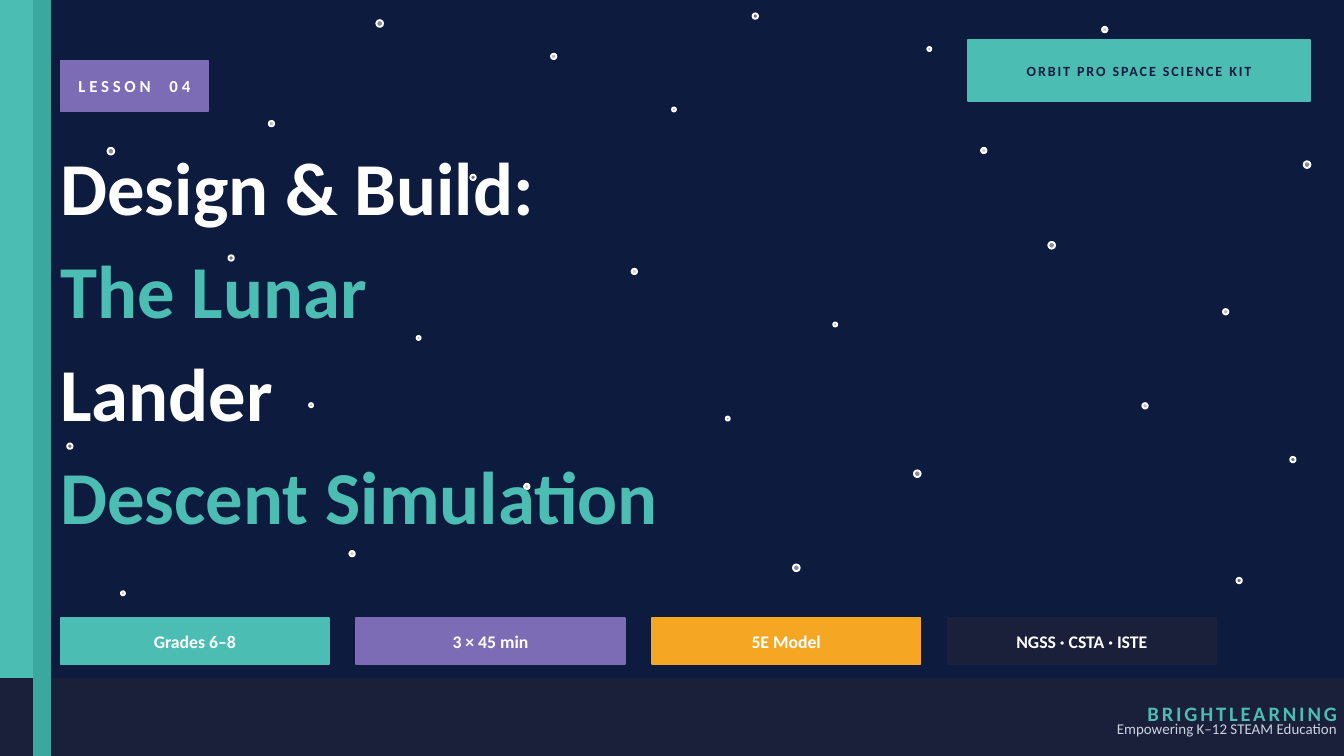
from pptx import Presentation
from pptx import util as u
from pptx.dml.color import RGBColor
from pptx.enum import shapes, text
from pptx.oxml import ns, xmlchemy

PX = u.Inches(1) // 200
NAVY = RGBColor(0x0D, 0x1B, 0x3E)
INK = RGBColor(0x1A, 0x1F, 0x3A)
TEAL = RGBColor(0x4B, 0xBD, 0xB3)
DARK_TEAL = RGBColor(0x3A, 0xA8, 0x9E)
PURPLE = RGBColor(0x7B, 0x6C, 0xB5)
ORANGE = RGBColor(0xF5, 0xA6, 0x23)
WHITE = RGBColor(0xFF, 0xFF, 0xFF)
PALE = RGBColor(0xCB, 0xD5, 0xE1)

presentation = Presentation()
presentation.slide_width = 2000 * PX
presentation.slide_height = 1125 * PX
slide = presentation.slides.add_slide(presentation.slide_layouts[5])
slide.background.fill.solid()
slide.background.fill.fore_color.rgb = NAVY


def add_shape(kind, box, color):
    shape = slide.shapes.add_shape(kind, *(value * PX for value in box))
    shape.shadow.inherit = False
    shape.fill.solid()
    shape.fill.fore_color.rgb = color
    shape.line.color.rgb = color
    shape.line.width = u.Pt(1)
    return shape


def write(shape, lines, size, colors, bold=True, spacing=0,
          align=text.PP_ALIGN.CENTER, anchor=text.MSO_ANCHOR.MIDDLE):
    frame = shape.text_frame
    frame.text = "\n".join(lines)
    frame.word_wrap = True
    frame.auto_size = text.MSO_AUTO_SIZE.NONE
    frame.vertical_anchor = anchor
    frame.margin_left = frame.margin_right = frame.margin_top = frame.margin_bottom = 0
    for paragraph, color in zip(frame.paragraphs, colors):
        paragraph.alignment = align
        paragraph.font.name = "Calibri"
        paragraph.font.size = u.Pt(size)
        paragraph.font.bold = bold
        paragraph.font.color.rgb = color
        if spacing:
            paragraph.runs[0]._r.get_or_add_rPr().set("spc", str(spacing))


stars = [
    (560, 30, 10, 50), (820, 80, 8, 70), (1120, 20, 8, 40), (1380, 70, 6, 65),
    (1640, 40, 8, 80), (160, 220, 10, 50), (400, 180, 8, 70), (700, 260, 8, 40),
    (1000, 160, 6, 65), (1460, 220, 8, 80), (1940, 240, 10, 50), (340, 380, 8, 40),
    (620, 500, 6, 65), (940, 400, 8, 80), (1240, 480, 6, 60), (1560, 360, 10, 50),
    (1820, 460, 8, 70), (100, 660, 8, 40), (460, 600, 6, 65), (780, 720, 8, 80),
    (1080, 620, 6, 60), (1360, 700, 10, 50), (1700, 600, 8, 70), (1920, 680, 8, 40),
    (180, 880, 6, 65), (520, 820, 8, 80), (1180, 840, 10, 50), (1480, 920, 8, 70),
    (1840, 860, 8, 40),
]
for left, top, diameter, opacity in stars:
    star = add_shape(shapes.MSO_SHAPE.OVAL, (left, top, diameter, diameter), WHITE)
    star_color = star.element.spPr.find(ns.qn("a:solidFill"))[0]
    alpha = xmlchemy.OxmlElement("a:alpha")
    alpha.set("val", str(opacity * 1000))
    star_color.append(alpha)

RECTANGLE = shapes.MSO_SHAPE.RECTANGLE
add_shape(RECTANGLE, (0, 0, 50, 1125), TEAL)
add_shape(RECTANGLE, (0, 1010, 2000, 115), INK)
add_shape(RECTANGLE, (50, 0, 24, 1125), DARK_TEAL)

kit_badge = add_shape(RECTANGLE, (1440, 60, 510, 90), TEAL)
write(kit_badge, ["ORBIT PRO SPACE SCIENCE KIT"], 7.5, [NAVY], spacing=100)
lesson_badge = add_shape(RECTANGLE, (90, 90, 220, 76), PURPLE)
write(lesson_badge, ["LESSON  04"], 9, [WHITE], spacing=200)

title = slide.shapes.title
title.left, title.top, title.width, title.height = 90 * PX, 190 * PX, 1260 * PX, 720 * PX
write(title, ["Design & Build:", "The Lunar", "Lander", "Descent Simulation"], 40,
      [WHITE, TEAL, WHITE, TEAL], align=text.PP_ALIGN.LEFT, anchor=text.MSO_ANCHOR.TOP)
for paragraph in title.text_frame.paragraphs:
    paragraph.line_spacing = 1.15
slide.shapes.element.append(title.element)

facts = [("Grades 6–8", TEAL), ("3 × 45 min", PURPLE), ("5E Model", ORANGE),
         ("NGSS · CSTA · ISTE", INK)]
for index, (label, color) in enumerate(facts):
    fact = add_shape(RECTANGLE, (90 + 440 * index, 920, 400, 68), color)
    write(fact, [label], 9.5, [WHITE])

brand = slide.shapes.add_textbox(1500 * PX, 1020 * PX, 490 * PX, 84 * PX)
write(brand, ["BRIGHTLEARNING"], 11, [TEAL], spacing=150, align=text.PP_ALIGN.RIGHT)
tagline = slide.shapes.add_textbox(1100 * PX, 1056 * PX, 890 * PX, 56 * PX)
write(tagline, ["Empowering K–12 STEAM Education"], 8, [PALE], bold=False,
      align=text.PP_ALIGN.RIGHT)

presentation.save("out.pptx")
